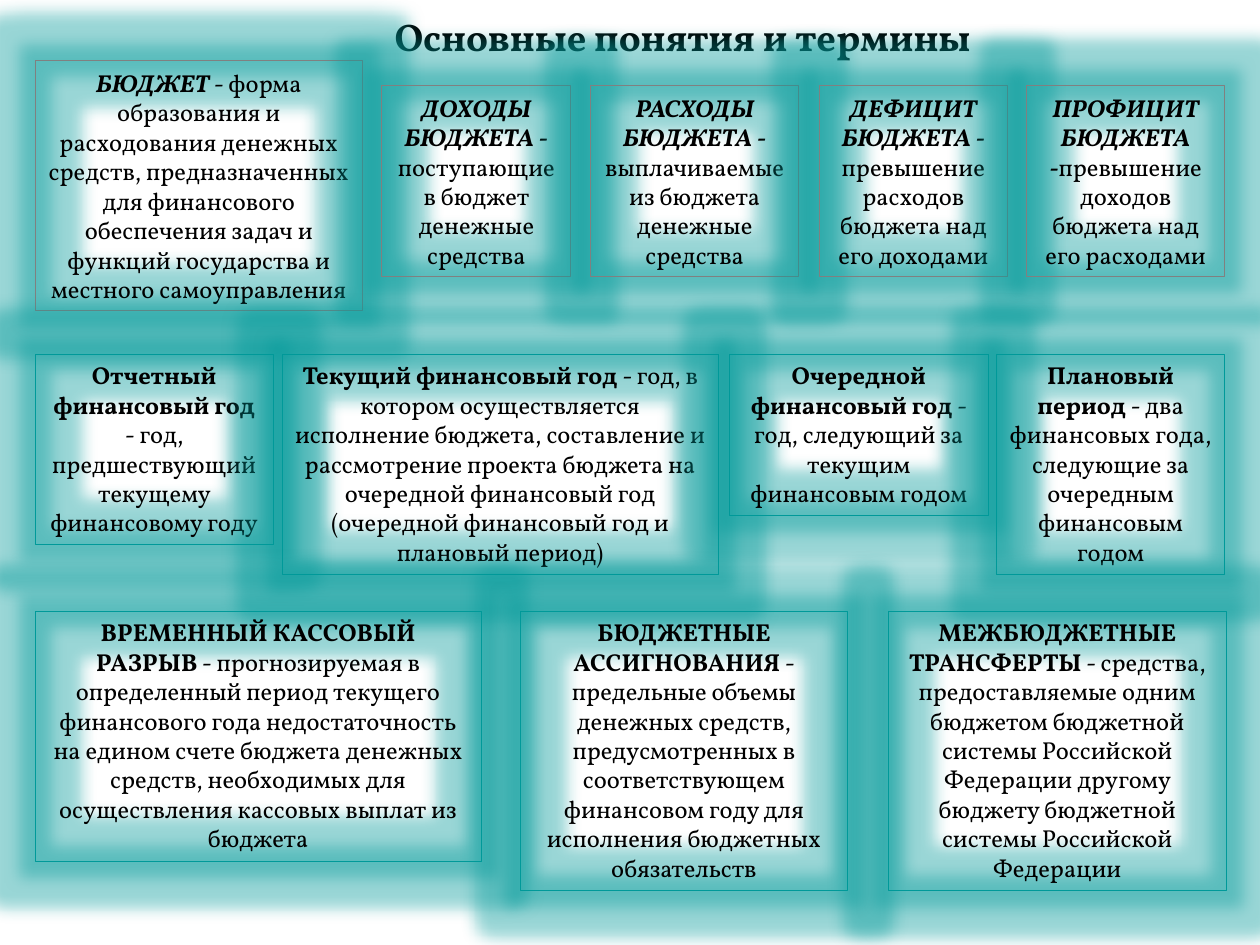
from lxml.etree import SubElement
from pptx import Presentation
from pptx.dml.color import RGBColor
from pptx.enum.shapes import MSO_SHAPE
from pptx.enum.text import MSO_ANCHOR, MSO_AUTO_SIZE, PP_ALIGN
from pptx.oxml.ns import qn
from pptx.util import Cm, Pt

COLORS = {"text": "000000", "gray": "808080", "teal": "009999"}
FONT = "Vollkorn"

# Each row: top, line colour, anchor, italic terms, boxes.
# Each box: left, width, height, term, definition.
ROWS = [
    (1.22, "gray", MSO_ANCHOR.MIDDLE, True, [
        (0.71, 6.6, 5.05, "БЮДЖЕТ",
         " - форма образования и расходования денежных средств, предназначенных для "
         "финансового обеспечения задач и функций государства и местного самоуправления"),
    ]),
    (1.73, "gray", MSO_ANCHOR.MIDDLE, True, [
        (7.7, 3.81, 3.84, "ДОХОДЫ БЮДЖЕТА - ", "поступающие в бюджет денежные средства"),
        (11.91, 4.19, 3.84, "РАСХОДЫ БЮДЖЕТА - ",
         "выплачиваемые из бюджета денежные средства"),
        (16.51, 3.81, 3.84, "ДЕФИЦИТ БЮДЖЕТА - ",
         "превышение расходов бюджета над его доходами"),
        (20.7, 3.99, 3.84, "ПРОФИЦИТ БЮДЖЕТА -",
         "превышение доходов бюджета над его расходами"),
    ]),
    (7.14, "teal", MSO_ANCHOR.TOP, False, [
        (0.71, 4.8, 3.84, "Отчетный финансовый год",
         " - год, предшествующий текущему финансовому году"),
        (5.69, 8.79, 4.45, "Текущий финансовый год",
         " - год, в котором осуществляется исполнение бюджета, составление и рассмотрение "
         "проекта бюджета на очередной финансовый год (очередной финансовый год и "
         "плановый период)"),
        (14.71, 5.21, 3.25, "Очередной финансовый год",
         " - год, следующий за текущим финансовым годом"),
        (20.09, 4.6, 4.45, "Плановый период",
         " - два финансовых года, следующие за очередным финансовым годом"),
    ]),
    (12.32, "teal", MSO_ANCHOR.TOP, False, [
        (0.71, 8.99, 5.05, "ВРЕМЕННЫЙ КАССОВЫЙ РАЗРЫВ",
         " - прогнозируемая в определенный период текущего финансового года "
         "недостаточность на едином счете бюджета денежных средств, необходимых для "
         "осуществления кассовых выплат из бюджета"),
        (10.49, 6.6, 5.64, "БЮДЖЕТНЫЕ АССИГНОВАНИЯ",
         " - предельные объемы денежных средств, предусмотренных в соответствующем "
         "финансовом году для исполнения бюджетных обязательств"),
        (17.91, 6.81, 5.64, "МЕЖБЮДЖЕТНЫЕ ТРАНСФЕРТЫ",
         " - средства, предоставляемые одним бюджетом бюджетной системы Российской "
         "Федерации другому бюджету бюджетной системы Российской Федерации"),
    ]),
]


def add_run(paragraph, text, size, bold, italic=False):
    run = paragraph.add_run()
    run.text = text
    font_format = {"name": FONT, "size": Pt(size), "bold": bold, "italic": italic}
    for attribute, value in font_format.items():
        setattr(run.font, attribute, value)
    run.font.color.rgb = RGBColor.from_string(COLORS["text"])


def add_glow(shape, color, radius, opacity):
    """Surround the outline with a soft glow; opacity is in percent."""
    shape.shadow.inherit = False
    effects = shape._element.spPr.find(qn("a:effectLst"))
    glow = SubElement(effects, qn("a:glow"), rad=str(radius))
    glow_color = SubElement(glow, qn("a:srgbClr"), val=color)
    SubElement(glow_color, qn("a:alpha"), val=str(opacity * 1000))


presentation = Presentation()
presentation.slide_width = Cm(25.4)
presentation.slide_height = Cm(19.05)
slide = presentation.slides.add_slide(presentation.slide_layouts[5])

title = slide.shapes.title
title_place = {"left": Cm(7.7), "top": Cm(0.13), "width": Cm(12.6), "height": Cm(1.19)}
for attribute, value in title_place.items():
    setattr(title, attribute, value)
title_format = {"word_wrap": True, "auto_size": MSO_AUTO_SIZE.NONE,
                "vertical_anchor": MSO_ANCHOR.TOP}
for attribute, value in title_format.items():
    setattr(title.text_frame, attribute, value)
paragraph = title.text_frame.paragraphs[0]
paragraph.alignment = PP_ALIGN.LEFT
add_run(paragraph, "Основные понятия и термины", 22, True)

for top, line_color, anchor, italic, boxes in ROWS:
    for left, width, height, term, definition in boxes:
        box = slide.shapes.add_shape(
            MSO_SHAPE.RECTANGLE, Cm(left), Cm(top), Cm(width), Cm(height))
        box.fill.background()
        box.line.color.rgb = RGBColor.from_string(COLORS[line_color])
        box.line.width = Pt(0.5)
        add_glow(box, COLORS["teal"], Pt(18), 40)

        box.text_frame.word_wrap = True
        box.text_frame.vertical_anchor = anchor
        paragraph = box.text_frame.paragraphs[0]
        paragraph.alignment = PP_ALIGN.CENTER
        add_run(paragraph, term, 14, True, italic)
        add_run(paragraph, definition, 14, False)

presentation.save("out.pptx")
